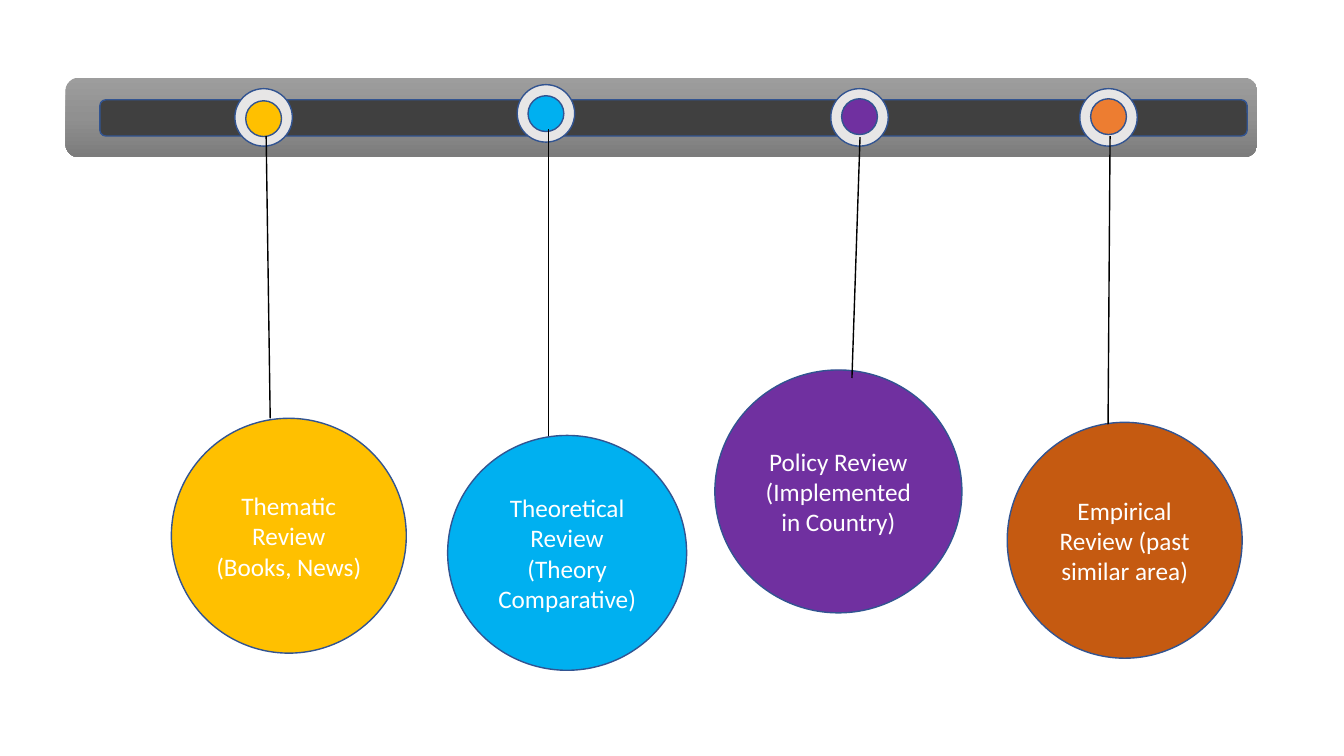
import copy

import pptx
import pptx.dml.color
import pptx.enum.shapes
import pptx.enum.text
import pptx.oxml.ns
import pptx.oxml.xmlchemy
import pptx.util
from pptx.util import Inches

COLOURS = {
    "outline": "325491", "track": "404040", "ring": "E7E6E6",
    "string": "000000", "text": "FFFFFF",
    "yellow": "FFC000", "blue": "00B0F0", "purple": "7030A0",
    "orange": "ED7D31", "rust": "C55A11",
    "rail top": "9D9D9D", "rail middle": "909090", "rail bottom": "7C7C7C",
}
RAIL = (0.65, 0.77, 11.82, 0.79)
TRACK = (0.99, 0.99, 11.38, 0.36)
RING_SIZE, DOT_SIZE = 0.57, 0.355

# "\n" starts a paragraph, "\v" breaks a line inside one
REVIEWS = [
    {"label": "Thematic\vReview\n(Books, News)",
     "ball": (1.7, 4.15, 2.33, 2.33), "ball colour": "yellow",
     "ring": (2.33, 0.88), "dot colour": "yellow", "dot drop": 0.12,
     "string": (2.64, 1.35, 2.68, 4.15)},
    {"label": "Theoretical\vReview\v(Theory\vComparative)",
     "ball": (4.44, 4.32, 2.37, 2.33), "ball colour": "blue",
     "ring": (5.13, 0.84), "dot colour": "blue", "dot drop": 0.11,
     "string": (5.44, 1.28, 5.44, 4.33)},
    {"label": "Policy Review\v(Implemented\vin Country)",
     "ball": (7.09, 3.67, 2.45, 2.41), "ball colour": "purple",
     "ring": (8.24, 0.88), "dot colour": "purple", "dot drop": 0.1,
     "string": (8.53, 1.36, 8.45, 3.75)},
    {"label": "Empirical\vReview (past\vsimilar area)",
     "ball": (9.99, 4.19, 2.33, 2.34), "ball colour": "rust",
     "ring": (10.71, 0.88), "dot colour": "orange", "dot drop": 0.1,
     "string": (11.01, 1.35, 10.99, 4.21)},
]
LABEL_FONT = {"name": "Calibri", "size": pptx.util.Pt(18)}
SHAPES = pptx.enum.shapes.MSO_SHAPE


def rgb(name):
    return pptx.dml.color.RGBColor.from_string(COLOURS[name])


def add_filled(parent, kind, box, colour):
    shape = parent.shapes.add_shape(kind, *map(Inches, box))
    shape.shadow.inherit = False
    shape.fill.solid()
    shape.fill.fore_color.rgb = rgb(colour)
    shape.line.color.rgb = rgb("outline")
    shape.line.width = pptx.util.Pt(1)
    return shape


def shade_rail(rail):
    """Give the rail a three-stop gradient running from top to bottom."""
    rail.line.fill.background()
    rail.fill.gradient()
    rail.fill.gradient_angle = 270
    stop_list = rail._element.spPr.find(".//" + pptx.oxml.ns.qn("a:gsLst"))
    stop_list.insert(1, copy.deepcopy(stop_list[0]))
    shades = [(0, "rail top"), (0.5, "rail middle"), (1, "rail bottom")]
    for stop, (position, colour) in zip(rail.fill.gradient_stops, shades):
        stop.position = position
        stop.color.rgb = rgb(colour)


def write_label(ball, label):
    frame = ball.text_frame
    frame.word_wrap = True
    frame.vertical_anchor = pptx.enum.text.MSO_ANCHOR.MIDDLE
    frame.text = label
    for paragraph in frame.paragraphs:
        paragraph.alignment = pptx.enum.text.PP_ALIGN.CENTER
        for run in paragraph.runs:
            for attribute, value in LABEL_FONT.items():
                setattr(run.font, attribute, value)
            run.font.color.rgb = rgb("text")


def add_string(parent, ends):
    string = parent.shapes.add_connector(
        pptx.enum.shapes.MSO_CONNECTOR.STRAIGHT, *map(Inches, ends))
    string.line.color.rgb = rgb("string")
    string.line.width = pptx.util.Pt(1)
    string._element.spPr.append(
        pptx.oxml.xmlchemy.OxmlElement("a:effectLst"))


def add_pendulum(slide, review):
    """Hang one labelled ball from its ring on the rail, as a group."""
    pendulum = slide.shapes.add_group_shape()
    ball = add_filled(pendulum, SHAPES.OVAL, review["ball"],
                      review["ball colour"])
    write_label(ball, review["label"])
    left, top = review["ring"]
    add_filled(pendulum, SHAPES.OVAL, (left, top, RING_SIZE, RING_SIZE), "ring")
    dot_left = left + (RING_SIZE - DOT_SIZE) / 2
    dot_top = top + review["dot drop"]
    add_filled(pendulum, SHAPES.OVAL, (dot_left, dot_top, DOT_SIZE, DOT_SIZE),
               review["dot colour"])
    add_string(pendulum, review["string"])


def main():
    deck = pptx.Presentation()
    deck.slide_width, deck.slide_height = Inches(13.33), Inches(7.5)
    slide = deck.slides.add_slide(deck.slide_layouts[6])
    shade_rail(add_filled(slide, SHAPES.ROUNDED_RECTANGLE, RAIL, "rail top"))
    add_filled(slide, SHAPES.ROUNDED_RECTANGLE, TRACK, "track")
    for review in REVIEWS:
        add_pendulum(slide, review)
    deck.save("out.pptx")


if __name__ == "__main__":
    main()
